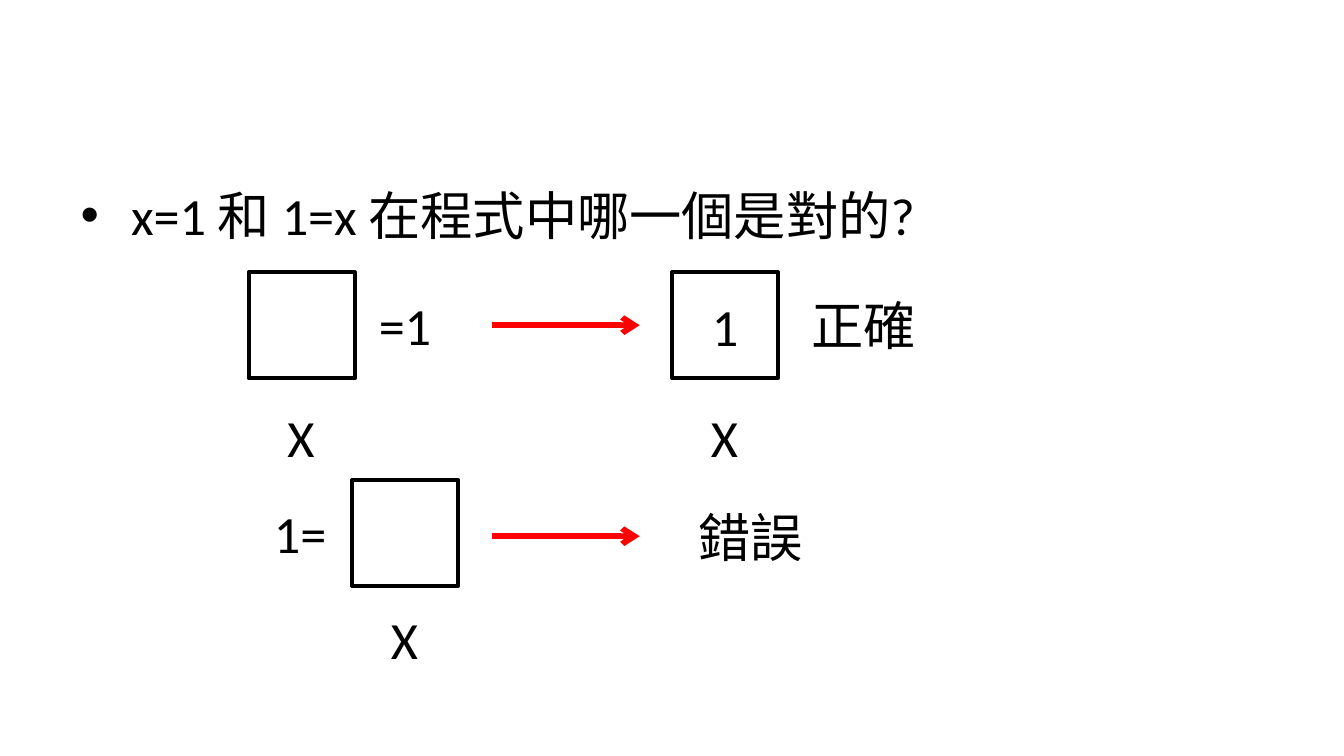
from lxml import etree
from pptx import Presentation
from pptx.dml.color import RGBColor
from pptx.enum.shapes import MSO_CONNECTOR, MSO_SHAPE
from pptx.enum.text import MSO_ANCHOR, MSO_AUTO_SIZE, PP_ALIGN
from pptx.oxml.ns import qn
from pptx.util import Emu, Pt

COLORS = {"ink": "000000", "paper": "FFFFFF", "arrow": "FF0000"}
LATIN, CJK = "Calibri", "Noto Sans CJK SC"
SIDE = 158
ARROW_X, ARROW_W = 732, 220


def px(n):
    """200 px to the inch."""
    return Emu(n * 4572)


def rgb(name):
    return RGBColor.from_string(COLORS[name])


def write(tf, text, font=LATIN):
    tf.text = text
    f = tf.paragraphs[0].runs[0].font
    f.size, f.name = Pt(28), font
    f.color.rgb = rgb("ink")
    latin = f._element.find(qn("a:latin"))
    latin.addnext(etree.Element(qn("a:ea"), typeface=CJK))


def add_label(s, x, y, w, text, font=LATIN):
    tf = s.shapes.add_textbox(px(x), px(y), px(w), px(114)).text_frame
    write(tf, text, font)
    tf.word_wrap = False
    tf.auto_size = MSO_AUTO_SIZE.SHAPE_TO_FIT_TEXT


def add_variable(s, x, y, name_dy, value=""):
    """A memory box with the variable name X below it."""
    sp = s.shapes.add_shape(MSO_SHAPE.RECTANGLE, px(x), px(y), px(SIDE), px(SIDE))
    sp.shadow.inherit = False
    sp.fill.solid()
    sp.fill.fore_color.rgb = rgb("paper")
    sp.line.color.rgb = rgb("ink")
    sp.line.width = Pt(2)
    if value:
        tf = sp.text_frame
        write(tf, value)
        tf.vertical_anchor = MSO_ANCHOR.MIDDLE
        tf.paragraphs[0].alignment = PP_ALIGN.CENTER
    add_label(s, x + 38, y + name_dy, 82, "X")


def add_arrow(s, y):
    c = s.shapes.add_connector(MSO_CONNECTOR.STRAIGHT, px(ARROW_X), px(y),
                               px(ARROW_X + ARROW_W), px(y))
    c.line.color.rgb = rgb("arrow")
    c.line.width = Pt(3)
    spPr = c._element.spPr
    etree.SubElement(spPr.find(qn("a:ln")), qn("a:tailEnd"), type="arrow")
    etree.SubElement(spPr, qn("a:effectLst"))


def add_question(s, x, y, w, h):
    body = s.placeholders[1]
    body.left, body.top, body.width, body.height = map(px, (x, y, w, h))
    write(body.text_frame, "x=1 和 1=x 在程式中哪一個是對的?")


def add_correct_row(s, x, y):
    add_variable(s, x, y, 188)
    add_label(s, x + 174, y + 21, 120, "=1")
    add_arrow(s, y + 79)
    add_variable(s, x + 630, y, 188, "1")
    add_label(s, x + 818, y + 21, 198, "正確", CJK)


def add_wrong_row(s, x, y):
    add_label(s, x, y + 22, 120, "1=")
    add_variable(s, x + 136, y, 180)
    add_arrow(s, y + 84)
    add_label(s, x + 632, y + 28, 198, "錯誤", CJK)


def main():
    prs = Presentation()
    prs.slide_width, prs.slide_height = px(2000), px(1125)
    s = prs.slides.add_slide(prs.slide_layouts[1])
    title = s.shapes.title._element
    title.getparent().remove(title)
    add_question(s, 100, 262, 1800, 742)
    add_correct_row(s, 370, 405)
    add_wrong_row(s, 388, 714)
    prs.save("out.pptx")


if __name__ == "__main__":
    main()
